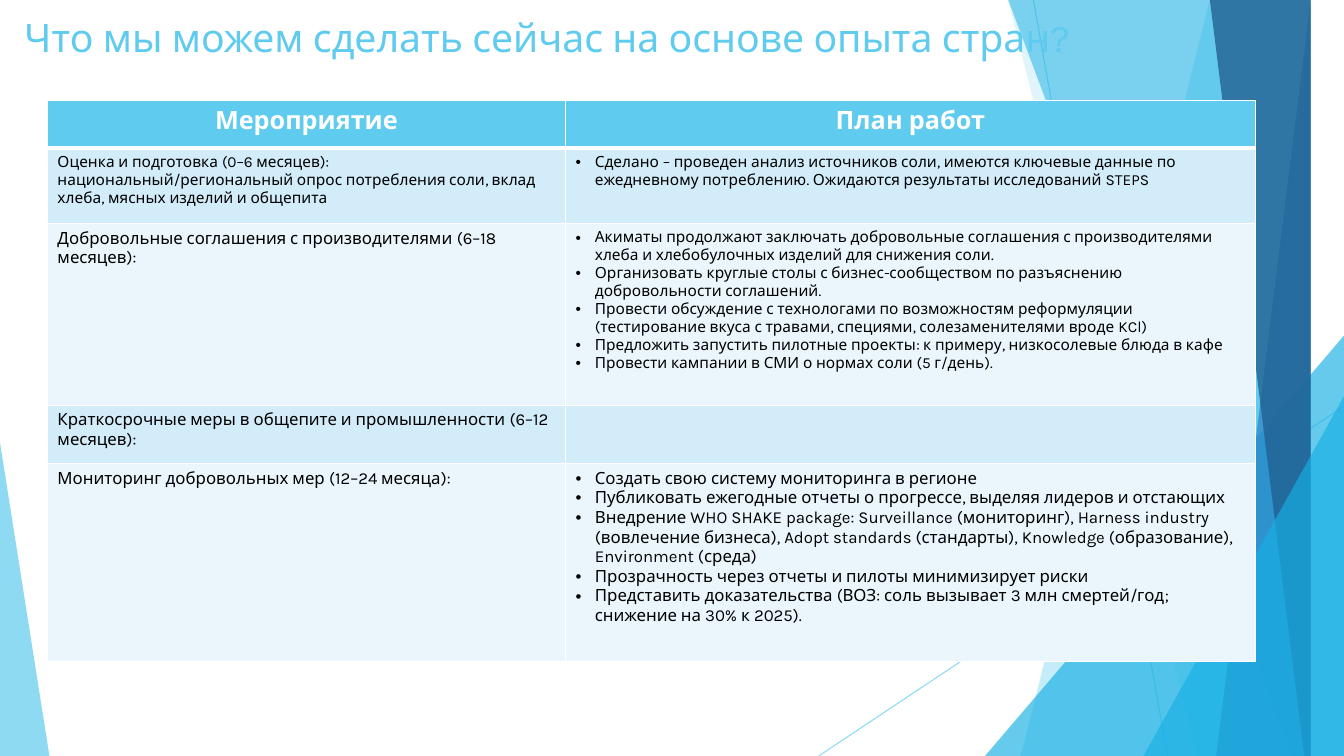
"""Build the slide on salt reduction steps: a title, a plan table and side art."""
import lxml.etree
import pptx
import pptx.dml.color
import pptx.enum.shapes
import pptx.enum.text
import pptx.oxml.ns
import pptx.util

TITLE = "Что мы можем сделать сейчас на основе опыта стран?"
HEADS = ("Мероприятие", "План работ")
ROWS = [
    (11, ["Оценка и подготовка (0–6 месяцев):",
          "национальный/региональный опрос потребления соли, вклад хлеба, мясных изделий и общепита"],
     11, ["Сделано – проведен анализ источников соли, имеются ключевые данные по ежедневному "
          "потреблению. Ожидаются результаты исследований STEPS"]),
    (12, ["Добровольные соглашения с производителями (6–18 месяцев):"],
     11, ["Акиматы продолжают заключать добровольные соглашения с производителями хлеба и "
          "хлебобулочных изделий для снижения соли.",
          "Организовать круглые столы с бизнес-сообществом по разъяснению добровольности соглашений.",
          "Провести обсуждение с технологами по возможностям реформуляции (тестирование вкуса "
          "с травами, специями, солезаменителями вроде KCl)",
          "Предложить запустить пилотные проекты: к примеру, низкосолевые блюда в кафе",
          "Провести кампании в СМИ о нормах соли (5 г/день)."]),
    (12, ["Краткосрочные меры в общепите и промышленности (6–12 месяцев):"], 12, []),
    (12, ["Мониторинг добровольных мер (12–24 месяца):"],
     12, ["Создать свою систему мониторинга в регионе",
          "Публиковать ежегодные отчеты о прогрессе, выделяя лидеров и отстающих",
          "Внедрение WHO SHAKE package: Surveillance (мониторинг), Harness industry (вовлечение "
          "бизнеса), Adopt standards (стандарты), Knowledge (образование), Environment (среда)",
          "Прозрачность через отчеты и пилоты минимизирует риски",
          "Представить доказательства (ВОЗ: соль вызывает 3 млн смертей/год; снижение на 30% к 2025)."]),
]
WIDE, HIGH = 13.33, 7.5
COLS = (5.14, 6.84)
TALL = (0.47, 0.75, 1.8, 0.58, 1.96)
THEME = {
    "font": "Karla", "title": 28, "head": 18,
    "sky": "5FCBEF", "cyan": "17B0E4", "blue": "2E83C3", "navy": "226292",
    "white": "FFFFFF", "ink": "000000", "bands": ("D2ECF9", "EAF6FC"),
}
RAYS = [((10.25, 0), (11.58, HIGH)), ((WIDE, 4.03), (8.12, HIGH))]
ART = [
    ("strip", (12.28, 10.04), "sky", 36),
    ("strip", (10.5, 11.83), "sky", 20),
    ("wedge", (9.77, 3.33, 3.56, 1), "cyan", 66),
    ("strip", (10.21, 12.91), "cyan", 50),
    ("strip", (13.03, 11.92), "blue", 70),
    ("strip", (11.96, 13.18), "navy", 80),
    ("wedge", (11.34, 3.93, 1.99, 1), "cyan", 66),
    ("wedge", (0, 4.39, 0.49, 0), "sky", 70),
]
Inches, Pt = pptx.util.Inches, pptx.util.Pt
Align = pptx.enum.text.PP_ALIGN
qn = pptx.oxml.ns.qn


def tint(name):
    """Return the colour object of a theme name or hex value."""
    return pptx.dml.color.RGBColor.from_string(THEME.get(name, name))


def add(top, tag, **keys):
    """Append an XML element with attributes to a parent."""
    return lxml.etree.SubElement(top, qn(tag), **keys)


def fade(shape, alpha):
    """Make the solid colour of a shape or line partly clear."""
    for node in shape.element.spPr.iter(qn("a:srgbClr")):
        add(node, "a:alpha", val=str(alpha * 1000))


def write(frame, lines, size, color="ink", bold=False, align=Align.LEFT, dots=False):
    """Fill a text frame with formatted paragraphs."""
    for num, line in enumerate(lines):
        para = frame.add_paragraph() if num else frame.paragraphs[0]
        para.alignment = align
        if dots:
            props = para._p.get_or_add_pPr()
            props.set("marL", str(Inches(0.19)))
            props.set("indent", str(-Inches(0.19)))
            add(props, "a:buFont", typeface="Arial")
            add(props, "a:buChar", char="•")
        run = para.add_run()
        run.text = line
        run.font.name, run.font.size, run.font.bold = THEME["font"], Pt(size), bold
        run.font.color.rgb = tint(color)


def draw(shapes):
    """Draw the thin rays and the clear strips and wedges."""
    for start, end in RAYS:
        ray = shapes.add_connector(pptx.enum.shapes.MSO_CONNECTOR.STRAIGHT,
                                   *map(Inches, start + end))
        ray.line.color.rgb = tint("sky")
        ray.line.width = Pt(0.75)
        fade(ray, 70)
        add(ray.element.spPr, "a:effectLst")
    for kind, place, color, alpha in ART:
        if kind == "strip":
            top, foot = place
            pen = shapes.build_freeform(top, 0, scale=Inches(1))
            pen.add_line_segments([(WIDE, 0), (WIDE, HIGH), (foot, HIGH)], close=True)
            shape = pen.convert_to_shape()
        else:
            left, top, width, peak = place
            shape = shapes.add_shape(pptx.enum.shapes.MSO_SHAPE.ISOSCELES_TRIANGLE,
                                     *map(Inches, (left, top, width, HIGH - top)))
            shape.adjustments[0] = peak
        shape.shadow.inherit = False
        shape.line.fill.background()
        shape.fill.solid()
        shape.fill.fore_color.rgb = tint(color)
        fade(shape, alpha)


def paint(cell, color, foot=1, roof=1):
    """Give a cell white borders and a plain fill."""
    props = cell._tc.get_or_add_tcPr()
    for side, width in (("L", 1), ("R", 1), ("T", roof), ("B", foot)):
        line = add(props, "a:ln" + side, w=str(Pt(width)))
        add(add(line, "a:solidFill"), "a:srgbClr", val=THEME["white"])
    cell.fill.solid()
    cell.fill.fore_color.rgb = tint(color)


def plan(shapes):
    """Add the table of steps and plans."""
    table = shapes.add_table(len(TALL), len(COLS), *map(
        Inches, (0.47, 1, sum(COLS), sum(TALL)))).table
    for col, width in zip(table.columns, COLS):
        col.width = Inches(width)
    for row, height in zip(table.rows, TALL):
        row.height = Inches(height)
    for cell, head in zip(table.rows[0].cells, HEADS):
        paint(cell, "sky", foot=3)
        write(cell.text_frame, [head], THEME["head"], "white", True, Align.CENTER)
    for num, (size, step, small, tasks) in enumerate(ROWS):
        left, right = table.rows[num + 1].cells
        for cell in (left, right):
            paint(cell, THEME["bands"][num % 2], roof=1 if num else 3)
        write(left.text_frame, step, size)
        write(right.text_frame, tasks, small, dots=True)


def main():
    """Build and save the slide."""
    deck = pptx.Presentation()
    deck.slide_width, deck.slide_height = Inches(WIDE), Inches(HIGH)
    slide = deck.slides.add_slide(deck.slide_layouts[5])
    draw(slide.shapes)
    title = slide.shapes.title
    title.left, title.top, title.width, title.height = map(Inches, (0.14, 0.05, 10.7, 0.64))
    title.text_frame.vertical_anchor = pptx.enum.text.MSO_ANCHOR.MIDDLE
    write(title.text_frame, [TITLE], THEME["title"], "sky")
    slide.shapes.element.append(title.element)
    plan(slide.shapes)
    deck.save("out.pptx")


if __name__ == "__main__":
    main()
